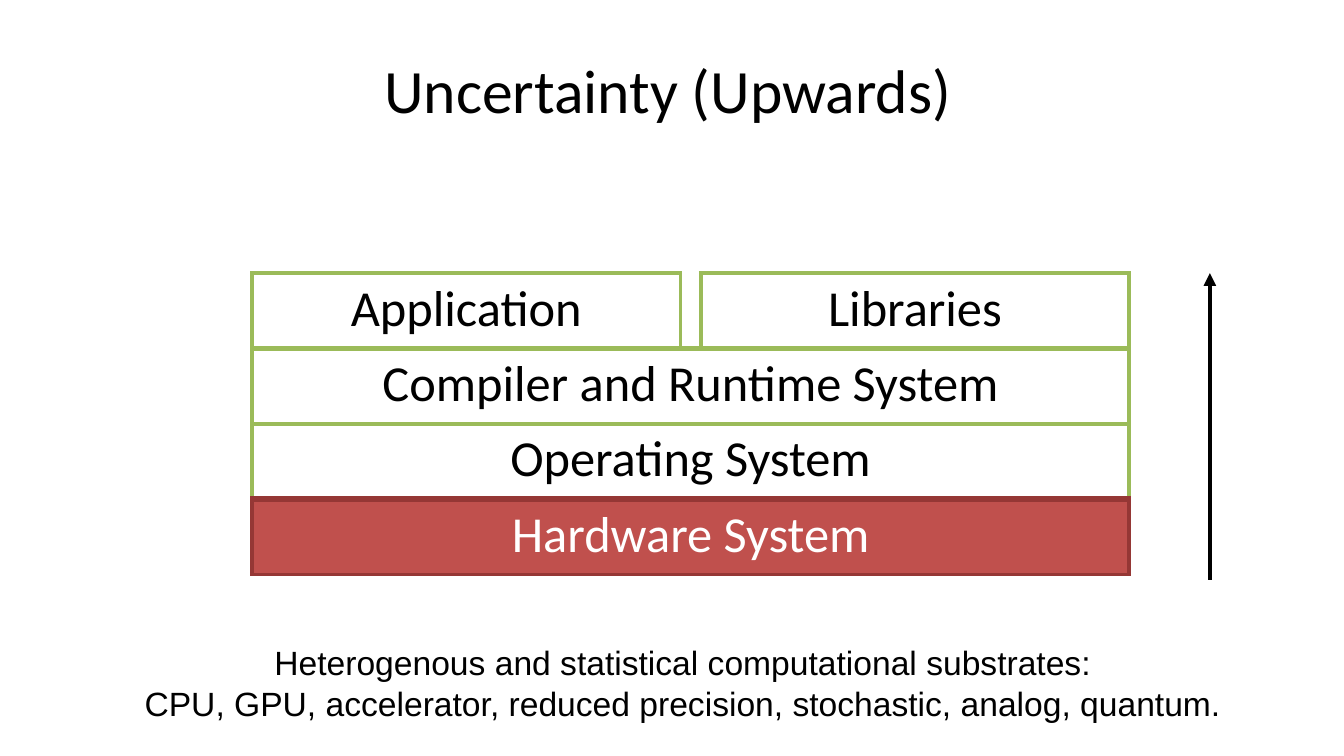
from lxml import etree
from pptx import Presentation, util as u
from pptx.dml.color import RGBColor
from pptx.enum import shapes, text
from pptx.oxml import ns

BLACK = RGBColor(0x00, 0x00, 0x00)
WHITE = RGBColor(0xFF, 0xFF, 0xFF)
GREEN = RGBColor(0x9B, 0xBB, 0x59)
RED = RGBColor(0xC0, 0x50, 0x4D)
DARK = RGBColor(0x95, 0x37, 0x35)
SCALE = 9144


def px(*vals):
    return [u.Emu(val * SCALE) for val in vals]


class Sheet:
    """Draws the elements of one slide in a shared style."""

    def __init__(self, deck):
        self.slide = deck.slides.add_slide(deck.slide_layouts[5])
        self.shapes = self.slide.shapes

    def label(self, frame, lines, size, font, color, gaps):
        frame.text = "\n".join(lines)
        for para, gap in zip(frame.paragraphs, gaps):
            para.alignment = text.PP_ALIGN.CENTER
            para.space_before = u.Pt(gap)
            para.font.size = u.Pt(size)
            para.font.name = font
            para.font.color.rgb = color

    def frame(self, shape, top):
        frame = shape.text_frame
        frame.word_wrap = True
        frame.auto_size = text.MSO_AUTO_SIZE.NONE
        frame.vertical_anchor = text.MSO_ANCHOR.TOP
        frame.margin_left = frame.margin_right = frame.margin_bottom = 0
        frame.margin_top = px(top)[0]
        return frame

    def title(self, words, box):
        shape = self.shapes.title
        shape.left, shape.top, shape.width, shape.height = px(*box)
        self.label(self.frame(shape, 16), [words], 44, "Calibri", BLACK, [1])

    def note(self, lines, box):
        shape = self.shapes.add_textbox(*px(*box))
        self.label(self.frame(shape, 1), lines, 24, "Arial", BLACK, [1, 0.2])

    def arrow(self, start, end):
        line = self.shapes.add_connector(
            shapes.MSO_CONNECTOR.STRAIGHT, *px(*start, *end))
        line.line.color.rgb = BLACK
        line.line.width = u.Pt(3)
        props = line._element.spPr
        edge = props.find(ns.qn("a:ln"))
        etree.SubElement(edge, ns.qn("a:tailEnd"), type="triangle")
        etree.SubElement(props, ns.qn("a:effectLst"))

    def border(self, cell, sides, color, bold):
        props = cell._tc.get_or_add_tcPr()
        for side in sides:
            width = u.Pt(4.5 if side in bold else 3)
            edge = etree.SubElement(props, ns.qn("a:ln" + side), w=str(width))
            fill = etree.SubElement(edge, ns.qn("a:solidFill"))
            etree.SubElement(fill, ns.qn("a:srgbClr"), val=str(color))

    def cell(self, cell, words, fill, ink):
        cell.fill.solid()
        cell.fill.fore_color.rgb = fill
        cell.margin_left = cell.margin_right = cell.margin_bottom = 0
        cell.margin_top = px(5)[0]
        cell.vertical_anchor = text.MSO_ANCHOR.TOP
        if words:
            self.label(cell.text_frame, [words], 36, "Calibri", ink, [3.4])

    def stack(self, layers, widths, box):
        table = self.shapes.add_table(
            len(layers), len(widths), *px(*box)).table
        table.first_row = table.horz_banding = False
        for col, width in zip(table.columns, px(*widths)):
            col.width = width
        for row, (words, edge, bold, fill, ink) in enumerate(layers):
            cells = [table.cell(row, col) for col in range(len(widths))]
            whole = len(words) == 1
            if whole:
                cells[0].merge(cells[-1])
            parts = ("LRTB", "TB", "RTB") if whole else ("LRTB", "LRB", "LRTB")
            for cell, sides in zip(cells, parts):
                self.border(cell, sides, edge, bold)
            for cell, word in zip(cells, words):
                self.cell(cell, word, fill, ink)


def main():
    deck = Presentation()
    deck.slide_width, deck.slide_height = px(1333, 750)
    sheet = Sheet(deck)
    sheet.title("Uncertainty (Upwards)", (53, 36, 1219, 110))
    sheet.stack([
        (("Application", "", "Libraries"), GREEN, "B", WHITE, BLACK),
        (("Compiler and Runtime System",), GREEN, "T", WHITE, BLACK),
        (("Operating System",), GREEN, "", WHITE, BLACK),
        (("Hardware System",), DARK, "T", RED, WHITE),
    ], (425, 20, 425), (250, 271, 870, 299))
    sheet.arrow((1200, 575), (1200, 271))
    sheet.note([
        "Heterogenous and statistical computational substrates:",
        "CPU, GPU, accelerator, reduced precision, stochastic, analog, quantum.",
    ], (142, 636, 1070, 83))
    deck.save("out.pptx")


if __name__ == "__main__":
    main()
